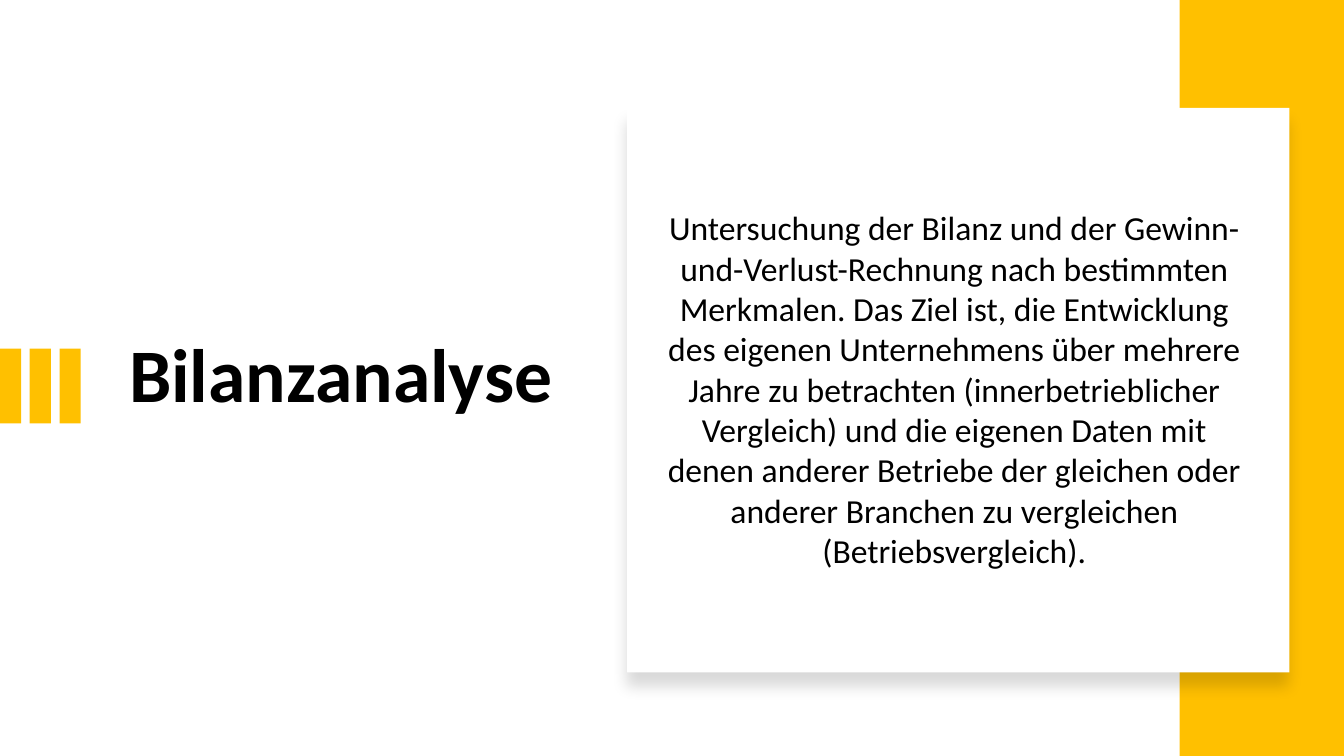
import pptx
import pptx.util
import pptx.dml.color
import pptx.enum.shapes
import pptx.enum.text
import pptx.oxml
import pptx.oxml.ns

Inches, Pt = pptx.util.Inches, pptx.util.Pt
COLORS = {"accent": "FFC000", "card": "FFFFFF", "text": "000000"}

prs = pptx.Presentation()
prs.slide_width, prs.slide_height = Inches(13.33), Inches(7.5)
s = prs.slides.add_slide(prs.slide_layouts[5])


def add_rect(left, top, width, height, color):
    sp = s.shapes.add_shape(
        pptx.enum.shapes.MSO_SHAPE.RECTANGLE,
        Inches(left), Inches(top), Inches(width), Inches(height))
    sp.shadow.inherit = False
    sp.fill.solid()
    sp.fill.fore_color.rgb = pptx.dml.color.RGBColor.from_string(COLORS[color])
    sp.line.fill.background()
    return sp


def set_text(sp, text, size, align, bold=False):
    tf = sp.text_frame
    tf.word_wrap = True
    tf.auto_size = pptx.enum.text.MSO_AUTO_SIZE.NONE
    tf.vertical_anchor = pptx.enum.text.MSO_ANCHOR.MIDDLE
    tf.text = text
    p = tf.paragraphs[0]
    p.alignment = align
    r = p.runs[0]
    r.font.name, r.font.size, r.font.bold = "Calibri", Pt(size), bold
    r.font.color.rgb = pptx.dml.color.RGBColor.from_string(COLORS["text"])
    return p


# Title
title = s.shapes.title
title.left, title.top = Inches(1.18), Inches(1.35)
title.width, title.height = Inches(4.42), Inches(4.79)
p = set_text(title, "Bilanzanalyse", 54, pptx.enum.text.PP_ALIGN.LEFT, bold=True)
p.line_spacing = 0.9

# Three accent bars at the left edge
for i in range(3):
    add_rect(i * 0.295, 3.46, 0.21, 0.74, "accent")

# Accent band at the right edge
add_rect(11.7, 0, 1.63, 7.5, "accent")

# White card with a soft shadow below
card = add_rect(6.22, 1.07, 6.57, 5.6, "card")
effects = card._element.spPr.find(pptx.oxml.ns.qn("a:effectLst"))
effects.append(pptx.oxml.parse_xml(
    f'<a:outerShdw {pptx.oxml.ns.nsdecls("a")} blurRad="{Pt(11)}" dist="{Pt(10)}" '
    f'dir="5400000" algn="t" rotWithShape="0"><a:srgbClr val="{COLORS["text"]}">'
    '<a:alpha val="15000"/></a:srgbClr></a:outerShdw>'))

# Definition on the card
body = s.shapes.add_textbox(Inches(6.51), Inches(1.46), Inches(5.91), Inches(4.79))
set_text(
    body,
    "Untersuchung der Bilanz und der Gewinn-und-Verlust-Rechnung nach bestimmten "
    "Merkmalen. Das Ziel ist, die Entwicklung des eigenen Unternehmens über mehrere "
    "Jahre zu betrachten (innerbetrieblicher Vergleich) und die eigenen Daten mit "
    "denen anderer Betriebe der gleichen oder anderer Branchen zu vergleichen "
    "(Betriebsvergleich).",
    24, pptx.enum.text.PP_ALIGN.CENTER)

prs.save("out.pptx")
